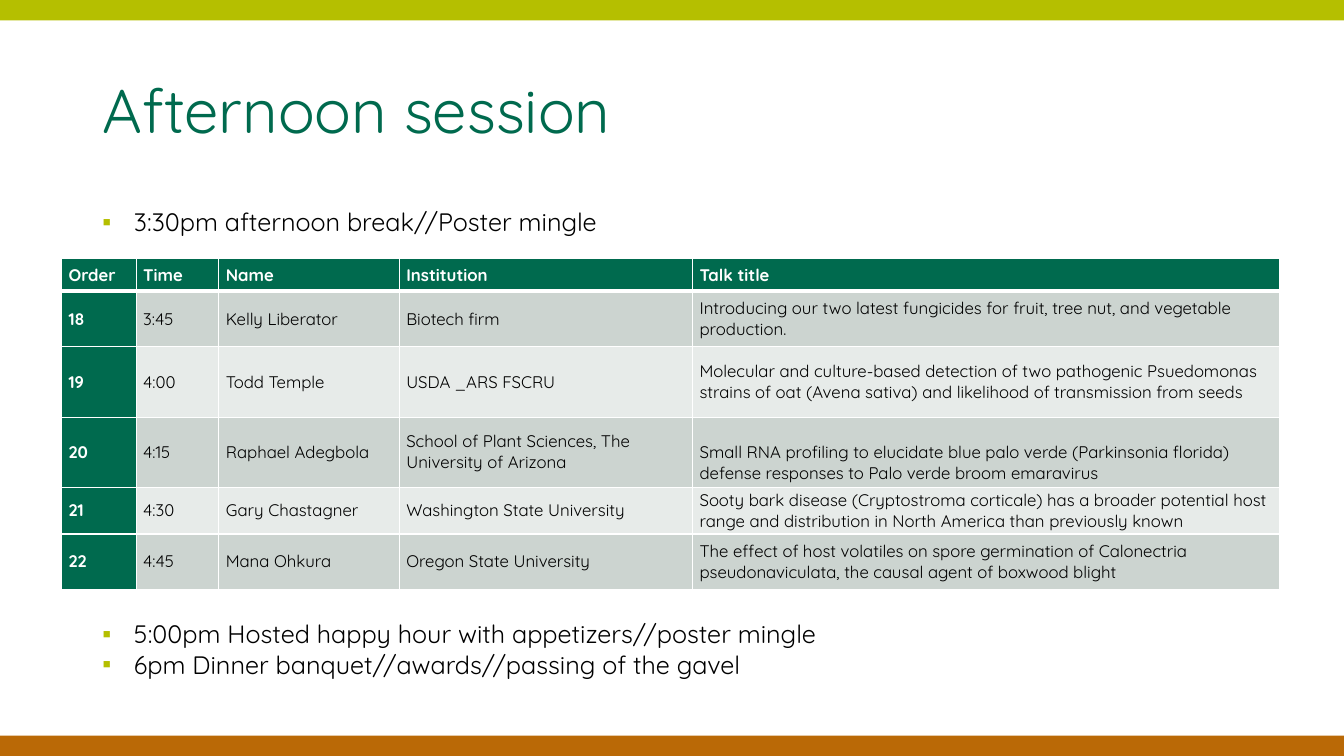
from dataclasses import dataclass

from lxml.etree import SubElement
from pptx import Presentation
from pptx.dml.color import RGBColor
from pptx.enum.shapes import MSO_SHAPE as Preset
from pptx.enum.text import MSO_ANCHOR as Anchor, MSO_AUTO_SIZE as AutoSize, PP_ALIGN as Align
from pptx.oxml.ns import qn
from pptx.util import Pt

FONT = "Quicksand"
COLORS = {
    "green": "006A4E",
    "lime": "B5BF00",
    "orange": "BA6906",
    "band_dark": "CCD4D0",
    "band_light": "E7EBE9",
    "white": "FFFFFF",
    "black": "000000",
}
SLIDE_WIDTH, SLIDE_HEIGHT = 960, 540
BAR_HEIGHT = 14.6
COLUMN_WIDTHS = (53.3, 59, 129, 209.5, 419)
ROW_HEIGHTS = (23.5, 39.5, 50.5, 50, 33.5, 39.5)
TABLE_LEFT, TABLE_TOP = 44, 184.5
CELL_MARGIN = 5
LIST_INDENT = 22.5
HEADINGS = ("Order", "Time", "Name", "Institution", "Talk title")


@dataclass(frozen=True)
class Bar:
    top: float
    color: str


@dataclass(frozen=True)
class Agenda:
    placeholder: int
    top: float
    width: float
    height: float
    items: tuple[str, ...]


@dataclass(frozen=True)
class Talk:
    time: str
    name: str
    institution: str
    title: str
    title_drop: float = 0


BARS = (Bar(0, "lime"), Bar(SLIDE_HEIGHT - BAR_HEIGHT, "orange"))
AGENDAS = (
    Agenda(1, 144, 480, 29, ("3:30pm afternoon break//Poster mingle",)),
    Agenda(2, 438.3, 620, 51, (
        "5:00pm Hosted happy hour with appetizers//poster mingle",
        "6pm Dinner banquet//awards//passing of the gavel",
    )),
)
FIRST_TALK = 18
TALKS = (
    Talk("3:45", "Kelly Liberator", "Biotech firm",
         "Introducing our two latest fungicides for fruit, tree nut, and vegetable production."),
    Talk("4:00", "Todd Temple", "USDA _ARS FSCRU",
         "Molecular and culture-based detection of two pathogenic Psuedomonas strains of oat "
         "(Avena sativa) and likelihood of transmission from seeds"),
    Talk("4:15", "Raphael Adegbola", "School of Plant Sciences, The University of Arizona",
         "Small RNA profiling to elucidate blue palo verde (Parkinsonia florida) defense "
         "responses to Palo verde broom emaravirus", 15),
    Talk("4:30", "Gary Chastagner", "Washington State University",
         "Sooty bark disease (Cryptostroma corticale) has a broader potential host range and "
         "distribution in North America than previously known"),
    Talk("4:45", "Mana Ohkura", "Oregon State University",
         "The effect of host volatiles on spore germination of Calonectria pseudonaviculata, "
         "the causal agent of boxwood blight"),
)


def rgb(name: str) -> RGBColor:
    return RGBColor.from_string(COLORS[name])


def style_font(paragraph, size: float, color: str, bold: bool = False) -> None:
    font = paragraph.font
    font.name, font.size, font.bold = FONT, Pt(size), bold
    font.color.rgb = rgb(color)


def place(shape, left: float, top: float, width: float, height: float) -> None:
    shape.left, shape.top = Pt(left), Pt(top)
    shape.width, shape.height = Pt(width), Pt(height)


def draw_bar(slide, bar: Bar) -> None:
    shape = slide.shapes.add_shape(
        Preset.RECTANGLE, Pt(0), Pt(bar.top), Pt(SLIDE_WIDTH), Pt(BAR_HEIGHT))
    shape.shadow.inherit = False
    shape.fill.solid()
    shape.fill.fore_color.rgb = rgb(bar.color)
    shape.line.fill.background()


def draw_title(slide, text: str) -> None:
    title = slide.shapes.title
    place(title, 66, 29, 828, 104.4)
    frame = title.text_frame
    frame.text = text
    frame.auto_size = AutoSize.NONE
    frame.vertical_anchor = Anchor.MIDDLE
    paragraph = frame.paragraphs[0]
    paragraph.alignment = Align.LEFT
    paragraph.line_spacing = 0.9
    style_font(paragraph, 44, "green")


def add_bullet(paragraph) -> None:
    properties = paragraph._p.get_or_add_pPr()
    properties.set("marL", str(Pt(LIST_INDENT)))
    properties.set("indent", str(-Pt(LIST_INDENT)))
    bullet_color = SubElement(properties, qn("a:buClr"))
    SubElement(bullet_color, qn("a:srgbClr"), val=COLORS["lime"])
    SubElement(properties, qn("a:buFont"), typeface="Arial")
    SubElement(properties, qn("a:buChar"), char="▪")


def draw_agenda(slide, agenda: Agenda) -> None:
    body = slide.placeholders[agenda.placeholder]
    place(body, 66, agenda.top, agenda.width, agenda.height)
    frame = body.text_frame
    frame.text = "\n".join(agenda.items)
    frame.auto_size = AutoSize.NONE
    for paragraph in frame.paragraphs:
        add_bullet(paragraph)
        paragraph.space_before = Pt(0)
        style_font(paragraph, 18, "black")


def add_borders(cell, widths: dict[str, float]) -> None:
    properties = cell._tc.get_or_add_tcPr()
    for side, width in widths.items():
        line = SubElement(properties, qn(f"a:ln{side}"), w=str(Pt(width)))
        fill = SubElement(line, qn("a:solidFill"))
        SubElement(fill, qn("a:srgbClr"), val=COLORS["white"])


def draw_table(slide) -> None:
    rows = [HEADINGS] + [
        (str(number), talk.time, talk.name, talk.institution, talk.title)
        for number, talk in enumerate(TALKS, FIRST_TALK)
    ]
    table = slide.shapes.add_table(
        len(rows), len(HEADINGS), Pt(TABLE_LEFT), Pt(TABLE_TOP),
        Pt(sum(COLUMN_WIDTHS)), Pt(sum(ROW_HEIGHTS))).table
    for column, width in zip(table.columns, COLUMN_WIDTHS):
        column.width = Pt(width)
    for row, height in zip(table.rows, ROW_HEIGHTS):
        row.height = Pt(height)
    for row_index, texts in enumerate(rows):
        band = "band_dark" if row_index % 2 else "band_light"
        for column_index, text in enumerate(texts):
            heading = row_index == 0 or column_index == 0
            cell = table.cell(row_index, column_index)
            cell.text = text
            cell.vertical_anchor = Anchor.MIDDLE
            cell.margin_left = cell.margin_right = Pt(CELL_MARGIN)
            cell.margin_top = cell.margin_bottom = Pt(0)
            add_borders(cell, {"L": 1, "R": 1, "T": 3 if row_index == 1 else 1,
                               "B": 3 if row_index == 0 else 1})
            cell.fill.solid()
            cell.fill.fore_color.rgb = rgb("green" if heading else band)
            style_font(cell.text_frame.paragraphs[0], 12,
                       "white" if heading else "black", heading)
    for row_index, talk in enumerate(TALKS, 1):
        table.cell(row_index, len(HEADINGS) - 1).margin_top = Pt(talk.title_drop)


def main() -> None:
    presentation = Presentation()
    presentation.slide_width, presentation.slide_height = Pt(SLIDE_WIDTH), Pt(SLIDE_HEIGHT)
    slide = presentation.slides.add_slide(presentation.slide_layouts.get_by_name("Two Content"))
    for bar in BARS:
        draw_bar(slide, bar)
    draw_title(slide, "Afternoon session")
    draw_table(slide)
    for agenda in AGENDAS:
        draw_agenda(slide, agenda)
    presentation.save("out.pptx")


if __name__ == "__main__":
    main()
